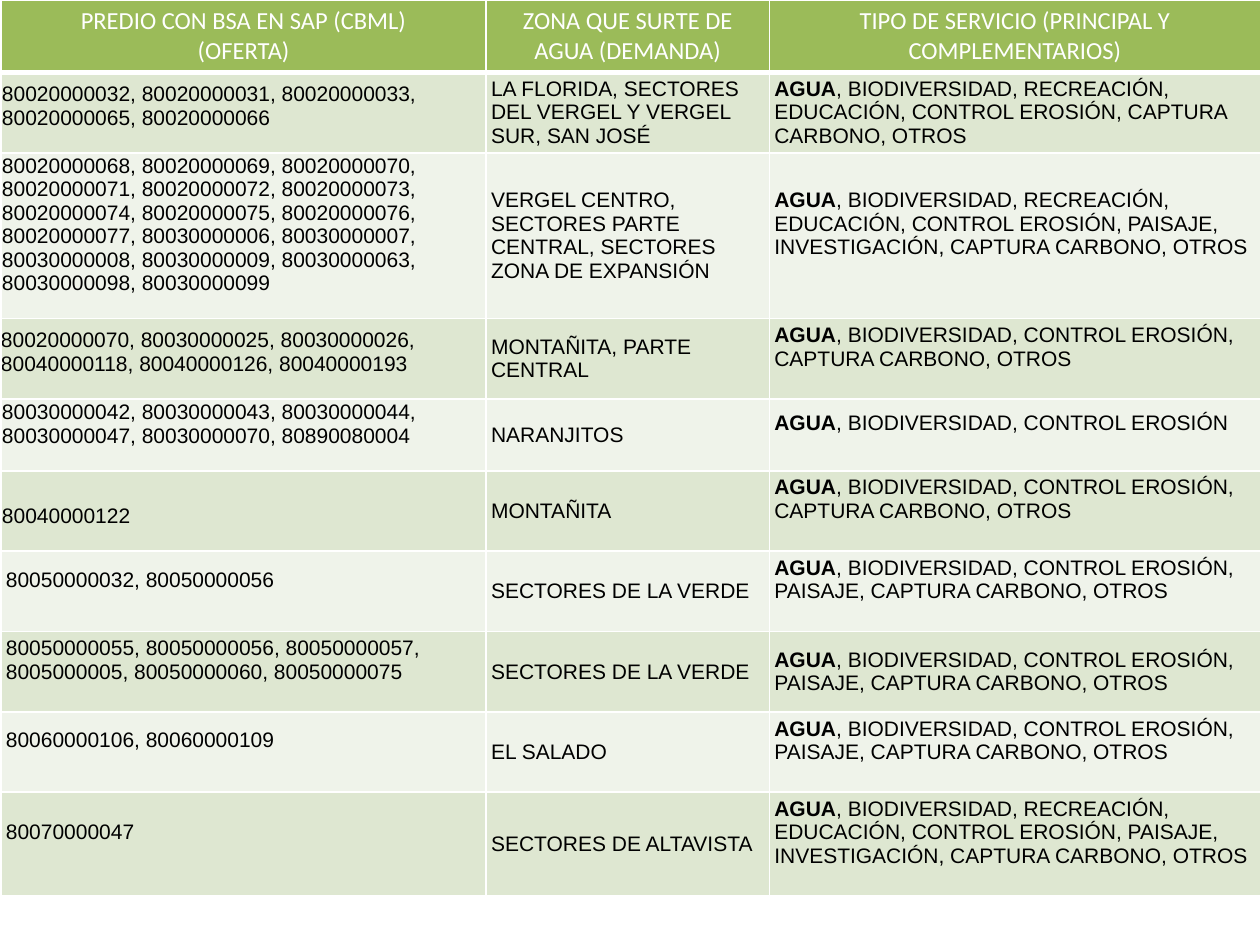
from dataclasses import dataclass

from lxml import etree
from pptx import Presentation
from pptx.dml.color import RGBColor
from pptx.enum.text import MSO_ANCHOR, PP_ALIGN
from pptx.oxml.ns import qn
from pptx.table import _Cell
from pptx.util import Cm, Pt

MIDDLE, BOTTOM = MSO_ANCHOR.MIDDLE, MSO_ANCHOR.BOTTOM
LEFT, CENTER = PP_ALIGN.LEFT, PP_ALIGN.CENTER

COLORS = {
    "header": "9BBB59",
    "odd": "DEE7D1",
    "even": "EFF3EA",
    "line": "FFFFFF",
    "header_text": "FFFFFF",
    "body_text": "000000",
}
COLUMN_WIDTHS = (9.78, 5.71, 9.9)
HEADER_HEIGHT = 1.45
INSET = 0.1
TAIL = 0.47  # free line kept below the text of some cells
HEADERS = (
    "PREDIO CON BSA EN SAP (CBML)\n(OFERTA)",
    "ZONA QUE SURTE DE AGUA (DEMANDA)",
    "TIPO DE SERVICIO (PRINCIPAL Y COMPLEMENTARIOS)",
)
MAIN_SERVICE = "AGUA"
EROSION_CARBON = ", BIODIVERSIDAD, CONTROL EROSIÓN, CAPTURA CARBONO, OTROS"
EROSION_LANDSCAPE = ", BIODIVERSIDAD, CONTROL EROSIÓN, PAISAJE, CAPTURA CARBONO, OTROS"
ALL_SERVICES = (", BIODIVERSIDAD, RECREACIÓN, EDUCACIÓN, CONTROL EROSIÓN, PAISAJE, "
                "INVESTIGACIÓN, CAPTURA CARBONO, OTROS")


@dataclass
class SupplyRow:
    plots: str
    zone: str
    services: str
    height: float = 1.62
    plot_inset: float = INSET
    plot_anchor: MSO_ANCHOR = MIDDLE
    service_tail: float = TAIL


ROWS = [
    SupplyRow("80020000032, 80020000031, 80020000033, 80020000065, 80020000066",
              "LA FLORIDA, SECTORES DEL VERGEL Y VERGEL SUR, SAN JOSÉ",
              ", BIODIVERSIDAD, RECREACIÓN, EDUCACIÓN, CONTROL EROSIÓN, "
              "CAPTURA CARBONO, OTROS",
              plot_inset=0.02, plot_anchor=BOTTOM, service_tail=0),
    SupplyRow("80020000068, 80020000069, 80020000070, 80020000071, 80020000072, "
              "80020000073, 80020000074, 80020000075, 80020000076, 80020000077, "
              "80030000006, 80030000007, 80030000008, 80030000009, 80030000063, "
              "80030000098, 80030000099",
              "VERGEL CENTRO, SECTORES PARTE CENTRAL, SECTORES ZONA DE EXPANSIÓN",
              ALL_SERVICES, height=3.34, plot_inset=0.02, plot_anchor=BOTTOM),
    SupplyRow("80020000070, 80030000025, 80030000026, 80040000118, 80040000126, "
              "80040000193",
              "MONTAÑITA, PARTE CENTRAL", EROSION_CARBON,
              plot_inset=0, plot_anchor=BOTTOM),
    SupplyRow("80030000042, 80030000043, 80030000044, 80030000047, 80030000070, "
              "80890080004",
              "NARANJITOS", ", BIODIVERSIDAD, CONTROL EROSIÓN",
              height=1.45, plot_inset=0.02, plot_anchor=BOTTOM),
    SupplyRow("80040000122", "MONTAÑITA", EROSION_CARBON,
              plot_inset=0.02, plot_anchor=BOTTOM),
    SupplyRow("80050000032, 80050000056", "SECTORES DE LA VERDE", EROSION_LANDSCAPE),
    SupplyRow("80050000055, 80050000056, 80050000057, 8005000005, 80050000060, "
              "80050000075",
              "SECTORES DE LA VERDE", EROSION_LANDSCAPE, service_tail=0),
    SupplyRow("80060000106, 80060000109", "EL SALADO", EROSION_LANDSCAPE),
    SupplyRow("80070000047", "SECTORES DE ALTAVISTA", ALL_SERVICES, height=2.08),
]


def set_borders(cell: _Cell, bottom: float = 1) -> None:
    """Draw the four white cell edges, widths in points."""
    properties = cell._tc.get_or_add_tcPr()
    for tag, width in (("lnL", 1), ("lnR", 1), ("lnT", 1), ("lnB", bottom)):
        line = etree.SubElement(properties, qn(f"a:{tag}"), w=str(Pt(width)))
        fill = etree.SubElement(line, qn("a:solidFill"))
        etree.SubElement(fill, qn("a:srgbClr"), val=COLORS["line"])


def paint_cell(cell: _Cell, color: str, bottom_border: float = 1) -> None:
    set_borders(cell, bottom_border)
    cell.fill.solid()
    cell.fill.fore_color.rgb = RGBColor.from_string(COLORS[color])


def set_margins(cell: _Cell, inset: float, bottom: float) -> None:
    cell.margin_left = cell.margin_right = cell.margin_top = Cm(inset)
    cell.margin_bottom = Cm(bottom)


def write_text(cell: _Cell, text: str, *, lead: str = "", font: str = "Arial",
               size: float = 12, color: str = "body_text",
               align: PP_ALIGN = LEFT, anchor: MSO_ANCHOR = MIDDLE) -> None:
    """Write one paragraph per line of text, after an optional bold lead."""
    cell.vertical_anchor = anchor
    frame = cell.text_frame
    for index, content in enumerate(text.split("\n")):
        paragraph = frame.add_paragraph() if index else frame.paragraphs[0]
        paragraph.alignment = align
        parts = [(content, False)]
        if lead and index == 0:
            parts.insert(0, (lead, True))
        for part, bold in parts:
            run = paragraph.add_run()
            run.text = part
            run.font.name = font
            run.font.size = Pt(size)
            run.font.bold = bold
            run.font.color.rgb = RGBColor.from_string(COLORS[color])


def main() -> None:
    presentation = Presentation()
    presentation.slide_width, presentation.slide_height = Cm(25.4), Cm(19.05)
    slide = presentation.slides.add_slide(presentation.slide_layouts[6])

    # Table grid
    heights = [HEADER_HEIGHT] + [row.height for row in ROWS]
    table = slide.shapes.add_table(len(heights), len(COLUMN_WIDTHS), Cm(0.02), Cm(0),
                                   Cm(sum(COLUMN_WIDTHS)), Cm(sum(heights))).table
    for column, width in zip(table.columns, COLUMN_WIDTHS):
        column.width = Cm(width)
    for table_row, height in zip(table.rows, heights):
        table_row.height = Cm(height)

    # Header row
    for cell, title in zip(table.rows[0].cells, HEADERS):
        paint_cell(cell, "header", bottom_border=3)
        write_text(cell, title, font="Calibri", size=14, color="header_text",
                   align=CENTER)

    # Supply rows: plots, zone, services
    for number, row in enumerate(ROWS, start=1):
        plots, zone, services = table.rows[number].cells
        for cell in (plots, zone, services):
            paint_cell(cell, "odd" if number % 2 else "even")
        tail_inset = INSET if row.plot_anchor == MIDDLE else 0
        set_margins(plots, row.plot_inset, tail_inset + TAIL)
        set_margins(zone, INSET, INSET)
        set_margins(services, INSET, INSET + row.service_tail)
        write_text(plots, row.plots, anchor=row.plot_anchor)
        write_text(zone, row.zone)
        write_text(services, row.services, lead=MAIN_SERVICE)

    presentation.save("out.pptx")


if __name__ == "__main__":
    main()
